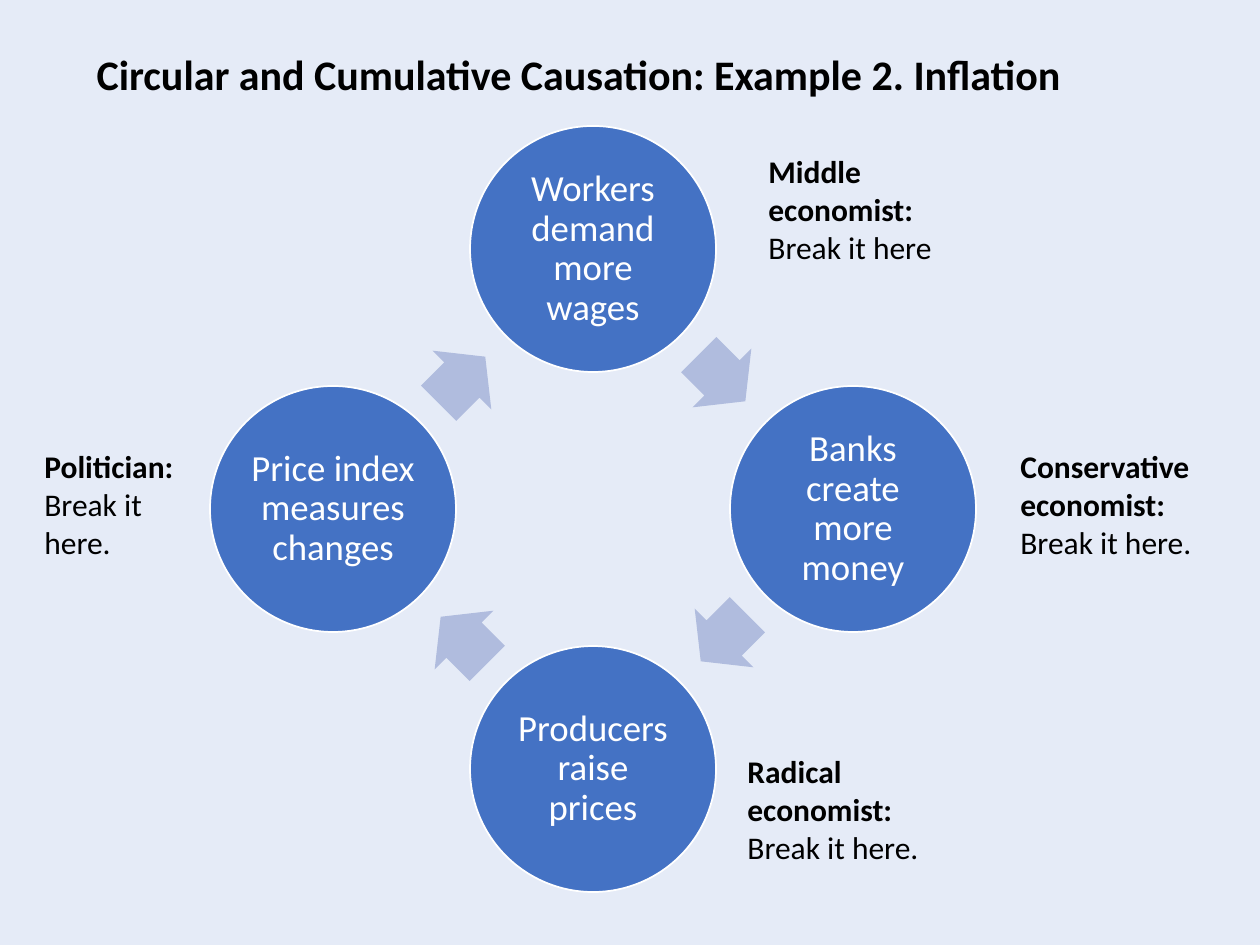
from pptx import Presentation
from pptx.dml.color import RGBColor
from pptx.enum.shapes import MSO_SHAPE as Shape
from pptx.enum.text import MSO_ANCHOR as Anchor, MSO_AUTO_SIZE as AutoSize, PP_ALIGN as Align
from pptx.util import Pt

SCALE = 914400 / 126
FONT = "Calibri"
COLORS = {
    "background": "E5EBF7",
    "node": "4472C4",
    "arrow": "B0BCDE",
    "light": "FFFFFF",
    "text": "000000",
}
STAGES = [
    "Workers demand more wages",
    "Banks create more money",
    "Producers raise prices",
    "Price index measures changes",
]
NOTES = [
    ((1008, 441, 199, 127), "Conservative economist:", " Break it here."),
    ((756, 146, 220, 127), "Middle economist:", " Break it here"),
    ((735, 746, 220, 127), "Radical economist:", " Break it here."),
    ((32, 441, 179, 127), "Politician:", " Break it here."),
]


def px(length):
    return round(length * SCALE)


def color(name):
    return RGBColor.from_string(COLORS[name])


def add_run(paragraph, words, size, shade, bold=False):
    run = paragraph.add_run()
    run.text = words
    run.font.name = FONT
    run.font.size = Pt(size)
    run.font.bold = bold
    run.font.color.rgb = color(shade)


def add_centered(slide, kind, center, size, shade):
    left, top = (c - s / 2 for c, s in zip(center, size))
    shape = slide.shapes.add_shape(kind, px(left), px(top), px(size[0]), px(size[1]))
    shape.shadow.inherit = False
    shape.fill.solid()
    shape.fill.fore_color.rgb = color(shade)
    return shape


def add_heading(slide, box, words):
    heading = slide.shapes.title
    heading.left, heading.top, heading.width, heading.height = map(px, box)
    frame = heading.text_frame
    frame.auto_size = AutoSize.NONE
    frame.vertical_anchor = Anchor.MIDDLE
    paragraph = frame.paragraphs[0]
    paragraph.alignment = Align.LEFT
    add_run(paragraph, words, 24, "text", bold=True)


def add_node(slide, center, diameter, words):
    node = add_centered(slide, Shape.OVAL, center, (diameter, diameter), "node")
    node.line.color.rgb = color("light")
    node.line.width = Pt(1)
    frame = node.text_frame
    frame.word_wrap = True
    frame.vertical_anchor = Anchor.MIDDLE
    frame.margin_left = frame.margin_right = px(4)
    frame.margin_top = frame.margin_bottom = px(4)
    paragraph = frame.paragraphs[0]
    paragraph.alignment = Align.CENTER
    paragraph.line_spacing = 0.9
    add_run(paragraph, words, 21, "light")


def add_cycle(slide, box, stages):
    left, top, side = box
    diameter = 246
    middle_x, middle_y = left + side / 2, top + side / 2
    node_x, node_y = 0, (diameter - side) / 2
    arrow_x, arrow_y = 129, -131
    for turn, stage in enumerate(stages):
        add_node(slide, (middle_x + node_x, middle_y + node_y), diameter, stage)
        arrow = add_centered(slide, Shape.RIGHT_ARROW,
                             (middle_x + arrow_x, middle_y + arrow_y), (66, 83), "arrow")
        arrow.line.fill.background()
        arrow.adjustments[0] = 0.6
        arrow.adjustments[1] = 0.5
        arrow.rotation = 45 + 90 * turn
        node_x, node_y = -node_y, node_x
        arrow_x, arrow_y = -arrow_y, arrow_x


def add_note(slide, box, speaker, advice):
    note = slide.shapes.add_textbox(*map(px, box))
    frame = note.text_frame
    frame.word_wrap = True
    paragraph = frame.paragraphs[0]
    add_run(paragraph, speaker, 18, "text", bold=True)
    add_run(paragraph, advice, 18, "text")


def main():
    deck = Presentation()
    deck.slide_width, deck.slide_height = px(1260), px(945)
    slide = deck.slides.add_slide(deck.slide_layouts[5])
    slide.background.fill.solid()
    slide.background.fill.fore_color.rgb = color("background")
    add_heading(slide, (84, 42, 1092, 63),
                "Circular and Cumulative Causation: Example 2. Inflation")
    add_cycle(slide, (210, 126, 766), STAGES)
    for box, speaker, advice in NOTES:
        add_note(slide, box, speaker, advice)
    deck.save("out.pptx")


if __name__ == "__main__":
    main()
